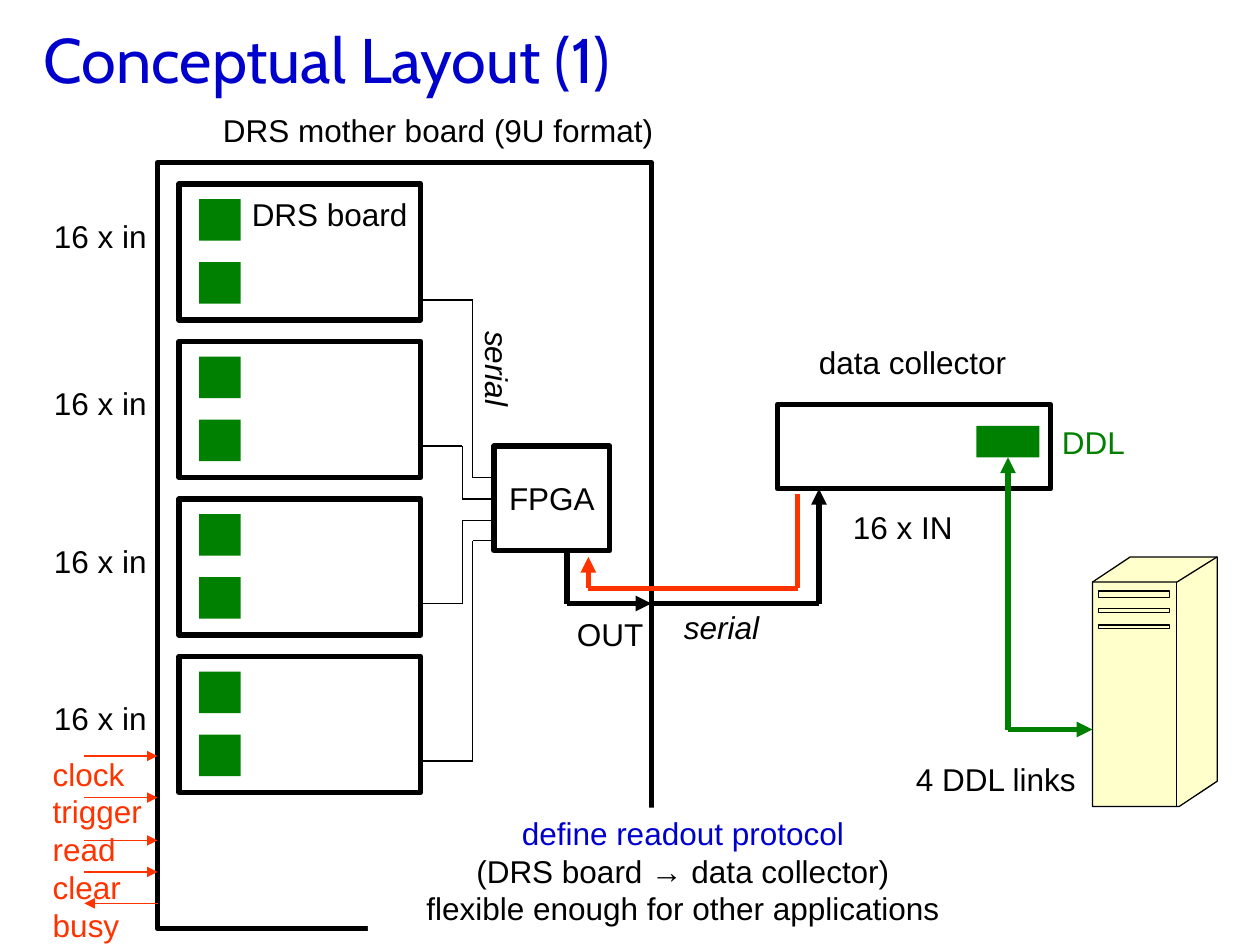
from lxml.etree import SubElement
from pptx import Presentation
from pptx.dml.color import RGBColor
from pptx.enum.shapes import MSO_CONNECTOR, MSO_SHAPE
from pptx.enum.text import MSO_ANCHOR, MSO_AUTO_SIZE, PP_ALIGN
from pptx.oxml.ns import qn
from pptx.util import Inches, Pt

BLACK = RGBColor(0x00, 0x00, 0x00)
WHITE = RGBColor(0xFF, 0xFF, 0xFF)
BLUE = RGBColor(0x00, 0x00, 0xCC)
RED = RGBColor(0xFF, 0x33, 0x00)
GREEN = RGBColor(0x00, 0x80, 0x00)
CREAM = RGBColor(0xFF, 0xFF, 0xCC)
THIN, THICK = 0.75, 3

TITLE = "Conceptual Layout (1)"
SIGNALS = ["clock", "trigger", "read", "clear", "busy"]
SUMMARY = [
    ("define readout protocol", BLUE),
    ("(DRS board → data collector)", BLACK),
    ("flexible enough for other applications", BLACK),
]

# text, left, top, width, colour, italic, rotation
LABELS = [
    ("OUT", 4.48, 4.83, 0.73, BLACK, False, 0),
    ("data collector", 6.4, 2.67, 1.69, BLACK, False, 0),
    ("16 x IN", 6.67, 3.98, 0.99, BLACK, False, 0),
    ("4 DDL links", 7.17, 5.98, 1.48, BLACK, False, 0),
    ("DDL", 8.33, 3.31, 0.7, GREEN, False, 0),
    ("DRS board", 1.9, 1.5, 1.44, BLACK, False, 0),
    ("DRS mother board (9U format)", 1.67, 0.83, 3.62, BLACK, False, 0),
    ("serial", 3.55, 2.73, 0.8, BLACK, True, 90),
    ("serial", 5.33, 4.78, 0.8, BLACK, True, 0),
]
INPUT_LABEL_TOPS = [1.67, 3, 4.25, 5.5]
BOARD_TOP, BOARD_PITCH, BOARD_COUNT = 1.46, 1.25, 4

# Signal arrows at the mother board edge: y, whether it points into the board
SIGNAL_ARROWS = [(6, True), (6.33, True), (6.67, True), (6.92, True), (7.17, False)]
SIGNAL_LEFT, SIGNAL_RIGHT = 0.67, 1.25

# Serial wires from board to FPGA: y at board, x of the bend, y at FPGA
SERIAL_WIRES = [(2.38, 3.75, 3.79), (3.54, 3.67, 3.96), (4.79, 3.67, 4.13), (6.04, 3.75, 4.29)]
BOARD_EDGE, FPGA_EDGE = 3.33, 3.92

# Data routes, each ending in an arrowhead
DATA_ROUTES = [
    ([(4.5, 4.38), (4.5, 4.79), (5.17, 4.79)], BLACK),
    ([(5.17, 4.79), (6.5, 4.79), (6.5, 3.88)], BLACK),
    ([(6.33, 3.92), (6.33, 4.67), (4.67, 4.67), (4.67, 4.42)], RED),
]
DDL_ROUTE = [(8, 3.63), (8, 5.79), (8.67, 5.79)]

COMPUTER_BODY = [(8.67, 4.62), (8.97, 4.42), (9.66, 4.42), (9.66, 6.2), (9.36, 6.4), (8.67, 6.4)]
COMPUTER_EDGES = [
    [(8.67, 4.62), (9.34, 4.62), (9.66, 4.42)],
    [(9.34, 4.62), (9.34, 6.4)],
]
COMPUTER_SLOTS = [(4.69, 0.05), (4.83, 0.03), (4.96, 0.03)]  # top, height

presentation = Presentation()
presentation.slide_width, presentation.slide_height = Inches(10), Inches(7.5)
slide = presentation.slides.add_slide(presentation.slide_layouts[6])


def style_shape(shape, fill=None, line=None, width=THICK):
    shape.shadow.inherit = False
    if fill is None:
        shape.fill.background()
    else:
        shape.fill.solid()
        shape.fill.fore_color.rgb = fill
    if line is None:
        shape.line.fill.background()
    else:
        shape.line.color.rgb = line
        shape.line.width = Pt(width)
    return shape


def add_box(left, top, width, height, fill=None, line=None, line_width=THICK):
    shape = slide.shapes.add_shape(
        MSO_SHAPE.RECTANGLE, Inches(left), Inches(top), Inches(width), Inches(height))
    return style_shape(shape, fill, line, line_width)


def write(shape, lines, align=PP_ALIGN.LEFT, anchor=MSO_ANCHOR.TOP, wrap=False,
          size=18, font="Arial", italic=False):
    """Fill a shape with (text, colour) lines."""
    frame = shape.text_frame
    frame.text = "\n".join(text for text, _ in lines)
    frame.word_wrap = wrap
    frame.vertical_anchor = anchor
    for paragraph, (_, color) in zip(frame.paragraphs, lines):
        paragraph.alignment = align
        for run in paragraph.runs:
            run.font.name, run.font.size = font, Pt(size)
            run.font.italic = italic
            run.font.color.rgb = color


def add_label(lines, left, top, width, height=0.4, rotation=0, **style):
    box = slide.shapes.add_textbox(Inches(left), Inches(top), Inches(width), Inches(height))
    box.rotation = rotation
    write(box, lines, **style)
    box.text_frame.auto_size = MSO_AUTO_SIZE.SHAPE_TO_FIT_TEXT


def add_route(points, color, width, arrow=False):
    """Join points by straight connectors, with an optional arrowhead at the last."""
    connectors = []
    for start, end in zip(points, points[1:]):
        connector = slide.shapes.add_connector(
            MSO_CONNECTOR.STRAIGHT, *(Inches(value) for value in start + end))
        connector.line.color.rgb = color
        connector.line.width = Pt(width)
        SubElement(connector._element.spPr, qn("a:effectLst"))
        connectors.append(connector)
    if arrow:
        add_arrowhead(connectors[-1], "a:tailEnd")
    return connectors


def add_arrowhead(connector, tag):
    SubElement(connector.line._get_or_add_ln(), qn(tag), type="triangle")


def add_outline(points, close, fill=None):
    corners = [(Inches(x), Inches(y)) for x, y in points]
    builder = slide.shapes.build_freeform(*corners[0])
    builder.add_line_segments(corners[1:], close=close)
    style_shape(builder.convert_to_shape(), fill, BLACK, THIN)


title = slide.shapes.add_textbox(Inches(0.25), 0, Inches(9.75), Inches(0.92))
write(title, [(TITLE, BLUE)], anchor=MSO_ANCHOR.MIDDLE, wrap=True, size=36, font="Cabin")

# Mother board with its DRS boards and inputs
add_box(1.25, 1.29, 3.92, 6.08, line=BLACK)
for index in range(BOARD_COUNT):
    top = BOARD_TOP + index * BOARD_PITCH
    add_box(1.42, top, 1.92, 1.08, line=BLACK)
    for chip_offset in (0.12, 0.62):
        add_box(1.58, top + chip_offset, 0.33, 0.33, fill=GREEN)
for top in INPUT_LABEL_TOPS:
    add_label([("16 x in", BLACK)], 0.33, top, 0.94)

add_label([(signal, RED) for signal in SIGNALS], 0.32, 5.94, 0.91, 1.6)
for y, inward in SIGNAL_ARROWS:
    ends = [(SIGNAL_LEFT, y), (SIGNAL_RIGHT, y)]
    add_route(ends if inward else ends[::-1], RED, THIN, arrow=True)

fpga = add_box(3.92, 3.54, 0.92, 0.83, line=BLACK)
write(fpga, [("FPGA", BLACK)], align=PP_ALIGN.CENTER, anchor=MSO_ANCHOR.MIDDLE)
for board_y, bend_x, fpga_y in SERIAL_WIRES:
    add_route([(BOARD_EDGE, board_y), (bend_x, board_y), (bend_x, fpga_y), (FPGA_EDGE, fpga_y)],
              BLACK, THIN)

# Data collector, computer and the links between them
add_box(6.17, 3.21, 2.17, 0.67, line=BLACK)
ddl_chip = add_box(7.75, 3.38, 0.5, 0.25, fill=GREEN)
add_outline(COMPUTER_BODY, close=True, fill=CREAM)
for edge in COMPUTER_EDGES:
    add_outline(edge, close=False)
for top, height in COMPUTER_SLOTS:
    add_box(8.72, top, 0.56, height, line=BLACK, line_width=THIN)

for points, color in DATA_ROUTES:
    add_route(points, color, THICK, arrow=True)
ddl_link = add_route(DDL_ROUTE, GREEN, THICK, arrow=True)[0]
ddl_link.begin_connect(ddl_chip, 2)
add_arrowhead(ddl_link, "a:headEnd")

for text, left, top, width, color, italic, rotation in LABELS:
    add_label([(text, color)], left, top, width, rotation=rotation, italic=italic)

summary = add_box(2.92, 6.41, 5, 1.01, fill=WHITE)
write(summary, SUMMARY, align=PP_ALIGN.CENTER, wrap=True)

presentation.save("out.pptx")
